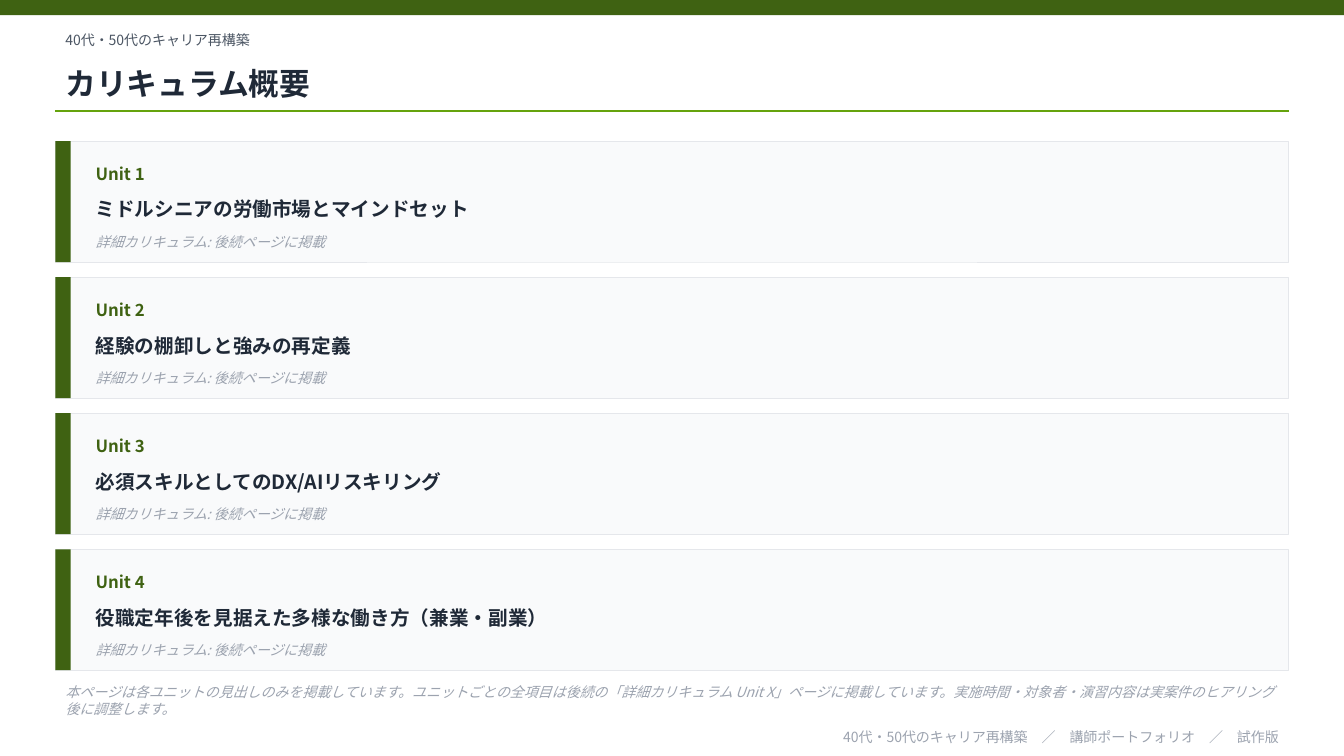
from lxml.etree import SubElement
from pptx import Presentation
from pptx.dml.color import RGBColor
from pptx.enum.shapes import MSO_CONNECTOR as Connector, MSO_SHAPE as Shape
from pptx.enum.text import MSO_ANCHOR as Anchor, PP_ALIGN as Align
from pptx.oxml.ns import qn
from pptx.util import Emu, Pt

FONT = "Noto Sans CJK JP"
GREEN, LIME = "3F6212", "65A30D"
INK, SLATE, MUTED = "1F2937", "4B5563", "9CA3AF"
CARD_FILL, CARD_EDGE = "F9FAFB", "E5E7EB"

SLIDE_W, SLIDE_H = 1333, 750
MARGIN, CONTENT_W = 55, 1223
CARD_TOP, CARD_H, CARD_GAP = 140, 120, 15
ACCENT_W, INDENT = 15, 30

COURSE = "40代・50代のキャリア再構築"
UNITS = [
    "ミドルシニアの労働市場とマインドセット",
    "経験の棚卸しと強みの再定義",
    "必須スキルとしてのDX/AIリスキリング",
    "役職定年後を見据えた多様な働き方（兼業・副業）",
]
DETAIL = "詳細カリキュラム: 後続ページに掲載"
NOTE = (
    "本ページは各ユニットの見出しのみを掲載しています。"
    "ユニットごとの全項目は後続の「詳細カリキュラム Unit X」ページに掲載しています。"
    "実施時間・対象者・演習内容は実案件のヒアリング後に調整します。"
)
FOOTER = f"{COURSE}　／　講師ポートフォリオ　／　試作版"


def px(length):
    """100 px to the inch."""
    return Emu(length * 9144)


def color(hex_code):
    return RGBColor.from_string(hex_code)


def add_rect(slide, x, y, w, h, fill, edge=None):
    rect = slide.shapes.add_shape(Shape.RECTANGLE, px(x), px(y), px(w), px(h))
    rect.shadow.inherit = False
    rect.fill.solid()
    rect.fill.fore_color.rgb = color(fill)
    if edge:
        rect.line.color.rgb = color(edge)
        rect.line.width = Pt(0.5)
    else:
        rect.line.fill.background()


def add_rule(slide, x, y, w):
    rule = slide.shapes.add_connector(
        Connector.STRAIGHT, px(x), px(y), px(x + w), px(y))
    rule.line.color.rgb = color(LIME)
    rule.line.width = Pt(1)
    SubElement(rule._element.spPr, qn("a:effectLst"))


def add_text(slide, x, y, w, h, text, size, ink,
             bold=False, italic=False, align=Align.LEFT):
    frame = slide.shapes.add_textbox(px(x), px(y), px(w), px(h)).text_frame
    frame.word_wrap = True
    frame.vertical_anchor = Anchor.MIDDLE
    paragraph = frame.paragraphs[0]
    paragraph.text = text
    paragraph.alignment = align
    font = paragraph.font
    font.name, font.size = FONT, Pt(size)
    font.bold, font.italic = bold, italic
    font.color.rgb = color(ink)
    # East Asian glyphs use the same typeface
    defaults = paragraph._p.pPr.find(qn("a:defRPr"))
    SubElement(defaults, qn("a:ea"), typeface=FONT)


def add_unit_card(slide, number, heading):
    top = CARD_TOP + (number - 1) * (CARD_H + CARD_GAP)
    left, width = MARGIN + INDENT, CONTENT_W - 50
    add_rect(slide, MARGIN, top, CONTENT_W, CARD_H, CARD_FILL, CARD_EDGE)
    add_rect(slide, MARGIN, top, ACCENT_W, CARD_H, GREEN)
    add_text(slide, left, top + 12, 150, 40, f"Unit {number}", 12, GREEN, bold=True)
    add_text(slide, left, top + 45, width, 45, heading, 14, INK, bold=True)
    add_text(slide, left, top + 85, width, 30, DETAIL, 10, MUTED, italic=True)


def main():
    deck = Presentation()
    deck.slide_width, deck.slide_height = px(SLIDE_W), px(SLIDE_H)
    slide = deck.slides.add_slide(deck.slide_layouts[6])

    # Header
    add_rect(slide, 0, 0, SLIDE_W, 15, GREEN)
    add_text(slide, MARGIN, 25, CONTENT_W, 30, COURSE, 10, SLATE)
    add_text(slide, MARGIN, 55, CONTENT_W, 55, "カリキュラム概要", 22, INK, bold=True)
    add_rule(slide, MARGIN, 110, CONTENT_W)

    # Unit cards
    for number, heading in enumerate(UNITS, start=1):
        add_unit_card(slide, number, heading)

    # Note and footer
    add_text(slide, MARGIN, 675, CONTENT_W, 40, NOTE, 10, MUTED, italic=True)
    add_text(slide, MARGIN, 720, CONTENT_W, 22, FOOTER, 10, MUTED, align=Align.RIGHT)

    deck.save("out.pptx")


if __name__ == "__main__":
    main()
